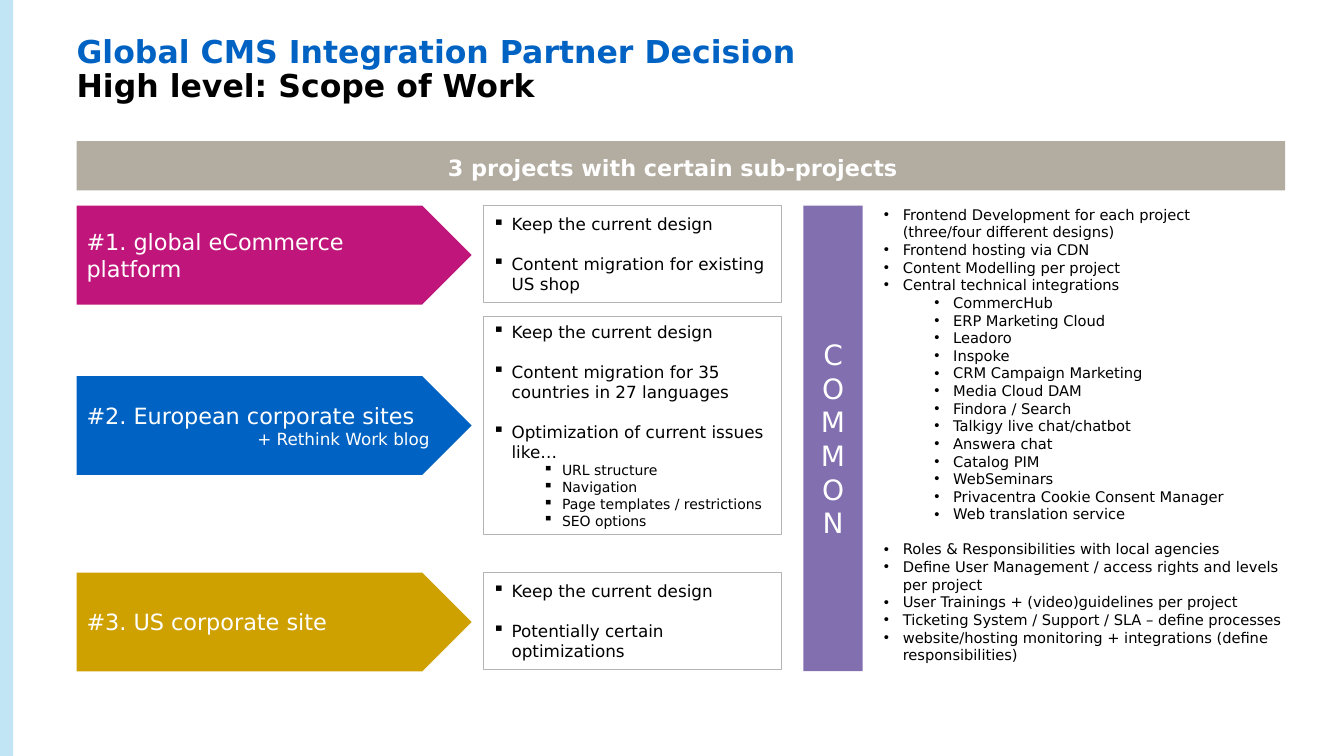
from dataclasses import dataclass

from pptx import Presentation
from pptx import util as u
from pptx.dml.color import RGBColor
from pptx.enum import shapes, text
from pptx.oxml.ns import qn
from lxml import etree

Pt = u.Pt


@dataclass(frozen=True)
class Theme:
    font: str = "DejaVu Sans"
    blue: str = "0062C2"
    black: str = "000000"
    white: str = "FFFFFF"
    pale_blue: str = "C1E5F4"
    magenta: str = "C0167B"
    gold: str = "CEA100"
    purple: str = "826FB0"
    taupe: str = "B2ACA1"
    border: str = "B4B4B4"
    title_size: float = 22.5
    letter_size: float = 20
    heading_size: float = 16
    text_size: float = 12
    common_size: float = 10.5
    detail_size: float = 10


@dataclass(frozen=True)
class Box:
    left: float
    top: float
    width: float
    height: float

    def lengths(self):
        return [Pt(n) for n in (self.left, self.top, self.width, self.height)]


@dataclass(frozen=True)
class Item:
    text: str
    level: int = 0
    gap: float = 0


THEME = Theme()
LEFT, RIGHT, TOP = 54.7, 918, 146.9
ARROW_WIDTH, ARROW_HEIGHT = 282.2, 70.6
TASKS_LEFT, TASKS_WIDTH = 344.9, 213.1
LINE_GAP = 14

DESIGN = Item("Keep the current design")
# arrow top, colour, name, addition, tasks top, tasks height, tasks
PROJECTS = [
    (TOP, THEME.magenta, "#1. global eCommerce platform", "", TOP, 69.1,
     [DESIGN, Item("Content migration for existing US shop", gap=LINE_GAP)]),
    (268.6, THEME.blue, "#2. European corporate sites", "+ Rethink Work blog", 226.1, 155.5,
     [DESIGN,
      Item("Content migration for 35 countries in 27 languages", gap=LINE_GAP),
      Item("Optimization of current issues like…", gap=LINE_GAP),
      *[Item(name, 1) for name in ("URL structure", "Navigation",
                                   "Page templates / restrictions", "SEO options")]]),
    (409, THEME.gold, "#3. US corporate site", "", 409, 69.1,
     [DESIGN, Item("Potentially certain optimizations", gap=LINE_GAP)]),
]

INTEGRATIONS = [
    "CommercHub", "ERP Marketing Cloud", "Leadoro", "Inspoke", "CRM Campaign Marketing",
    "Media Cloud DAM", "Findora / Search", "Talkigy live chat/chatbot", "Answera chat",
    "Catalog PIM", "WebSeminars", "Privacentra Cookie Consent Manager",
    "Web translation service",
]
COMMON_ITEMS = [
    Item("Frontend Development for each project\n(three/four different designs)"),
    Item("Frontend hosting via CDN"),
    Item("Content Modelling per project"),
    Item("Central technical integrations"),
    *[Item(name, 1) for name in INTEGRATIONS],
    Item("Roles & Responsibilities with local agencies", gap=12.5),
    Item("Define User Management / access rights and levels per project"),
    Item("User Trainings + (video)guidelines per project"),
    Item("Ticketing System / Support / SLA – define processes"),
    Item("website/hosting monitoring + integrations (define responsibilities)"),
]


def add_run(paragraph, words, size, color, bold=False):
    run = paragraph.add_run()
    run.text = words
    run.font.name = THEME.font
    run.font.size = Pt(size)
    run.font.bold = bold
    run.font.color.rgb = RGBColor.from_string(color)


def place(shape, box):
    shape.left, shape.top, shape.width, shape.height = box.lengths()


def clear_insets(frame):
    frame.margin_left = frame.margin_top = frame.margin_right = frame.margin_bottom = 0
    frame.auto_size = text.MSO_AUTO_SIZE.NONE
    frame.word_wrap = True


def add_block(slide, kind, box, fill=None, border=None):
    shape = slide.shapes.add_shape(kind, *box.lengths())
    shape.shadow.inherit = False
    if fill:
        shape.fill.solid()
        shape.fill.fore_color.rgb = RGBColor.from_string(fill)
    else:
        shape.fill.background()
    if border:
        shape.line.color.rgb = RGBColor.from_string(border)
        shape.line.width = Pt(0.25)
    else:
        shape.line.fill.background()
    frame = shape.text_frame
    frame.word_wrap = True
    frame.vertical_anchor = text.MSO_ANCHOR.MIDDLE
    frame.paragraphs[0].alignment = text.PP_ALIGN.LEFT
    return shape


def fill_list(frame, items, bullet, sizes):
    """Write bulleted items; sizes holds one type size per level."""
    for index, item in enumerate(items):
        paragraph = frame.paragraphs[0] if index == 0 else frame.add_paragraph()
        paragraph.level = item.level
        paragraph.alignment = text.PP_ALIGN.LEFT
        paragraph.space_before = Pt(item.gap)
        properties = paragraph._p.get_or_add_pPr()
        properties.set("marL", str(Pt(13.5 + 36 * item.level)))
        properties.set("indent", str(Pt(-13.5)))
        etree.SubElement(properties, qn("a:buChar")).set("char", bullet)
        for number, line in enumerate(item.text.split("\n")):
            if number:
                paragraph.add_line_break()
            add_run(paragraph, line, sizes[item.level], THEME.black)


def set_title(title, box):
    place(title, box)
    clear_insets(title.text_frame)
    title.text_frame.vertical_anchor = text.MSO_ANCHOR.TOP
    paragraph = title.text_frame.paragraphs[0]
    paragraph.alignment = text.PP_ALIGN.LEFT
    paragraph.line_spacing = 0.9
    add_run(paragraph, "Global CMS Integration Partner Decision", THEME.title_size, THEME.blue, True)
    paragraph.add_line_break()
    add_run(paragraph, "High level: Scope of Work", THEME.title_size, THEME.black, True)


def add_banner(slide, box):
    frame = add_block(slide, shapes.MSO_SHAPE.RECTANGLE, box, THEME.taupe).text_frame
    frame.margin_right = Pt(18.7)
    paragraph = frame.paragraphs[0]
    paragraph.alignment = text.PP_ALIGN.CENTER
    paragraph.line_spacing = 1.1
    add_run(paragraph, "3 projects with certain sub-projects", THEME.heading_size, THEME.white, True)


def add_project_arrow(slide, box, color, name, addition):
    frame = add_block(slide, shapes.MSO_SHAPE.PENTAGON, box, color).text_frame
    add_run(frame.paragraphs[0], name, THEME.heading_size, THEME.white)
    if addition:
        paragraph = frame.add_paragraph()
        paragraph.alignment = text.PP_ALIGN.LEFT
        paragraph._p.get_or_add_pPr().set("marL", str(Pt(122)))
        add_run(paragraph, addition, THEME.text_size, THEME.white)


def add_tasks(slide, box, items):
    shape = add_block(slide, shapes.MSO_SHAPE.RECTANGLE, box, border=THEME.border)
    fill_list(shape.text_frame, items, "▪", (THEME.text_size, THEME.detail_size))


def add_common_bar(slide, box):
    """Draw the narrow bar, whose word wraps to one letter a line."""
    shape = add_block(slide, shapes.MSO_SHAPE.RECTANGLE, box, THEME.purple)
    paragraph = shape.text_frame.paragraphs[0]
    paragraph.alignment = text.PP_ALIGN.CENTER
    add_run(paragraph, "COMMON", THEME.letter_size, THEME.white)


def set_common_list(body, box):
    place(body, box)
    clear_insets(body.text_frame)
    body.text_frame.vertical_anchor = text.MSO_ANCHOR.TOP
    fill_list(body.text_frame, COMMON_ITEMS, "•", (THEME.common_size, THEME.common_size))


def main():
    presentation = Presentation()
    presentation.slide_width, presentation.slide_height = Pt(960), Pt(540)
    slide = presentation.slides.add_slide(presentation.slide_layouts[1])
    add_block(slide, shapes.MSO_SHAPE.RECTANGLE, Box(0, 0, 9.4, 540), THEME.pale_blue)
    set_title(slide.shapes.title, Box(LEFT, 25.9, 764, 49.7))
    add_banner(slide, Box(LEFT, 100.8, RIGHT - LEFT, 35.3))
    for arrow_top, color, name, addition, tasks_top, tasks_height, tasks in PROJECTS:
        add_project_arrow(slide, Box(LEFT, arrow_top, ARROW_WIDTH, ARROW_HEIGHT),
                          color, name, addition)
        add_tasks(slide, Box(TASKS_LEFT, tasks_top, TASKS_WIDTH, tasks_height), tasks)
    add_common_bar(slide, Box(573.8, TOP, 42.5, 332.6))
    set_common_list(slide.placeholders[1], Box(631.4, TOP, RIGHT - 631.4, 330.5))
    presentation.save("out.pptx")


if __name__ == "__main__":
    main()
